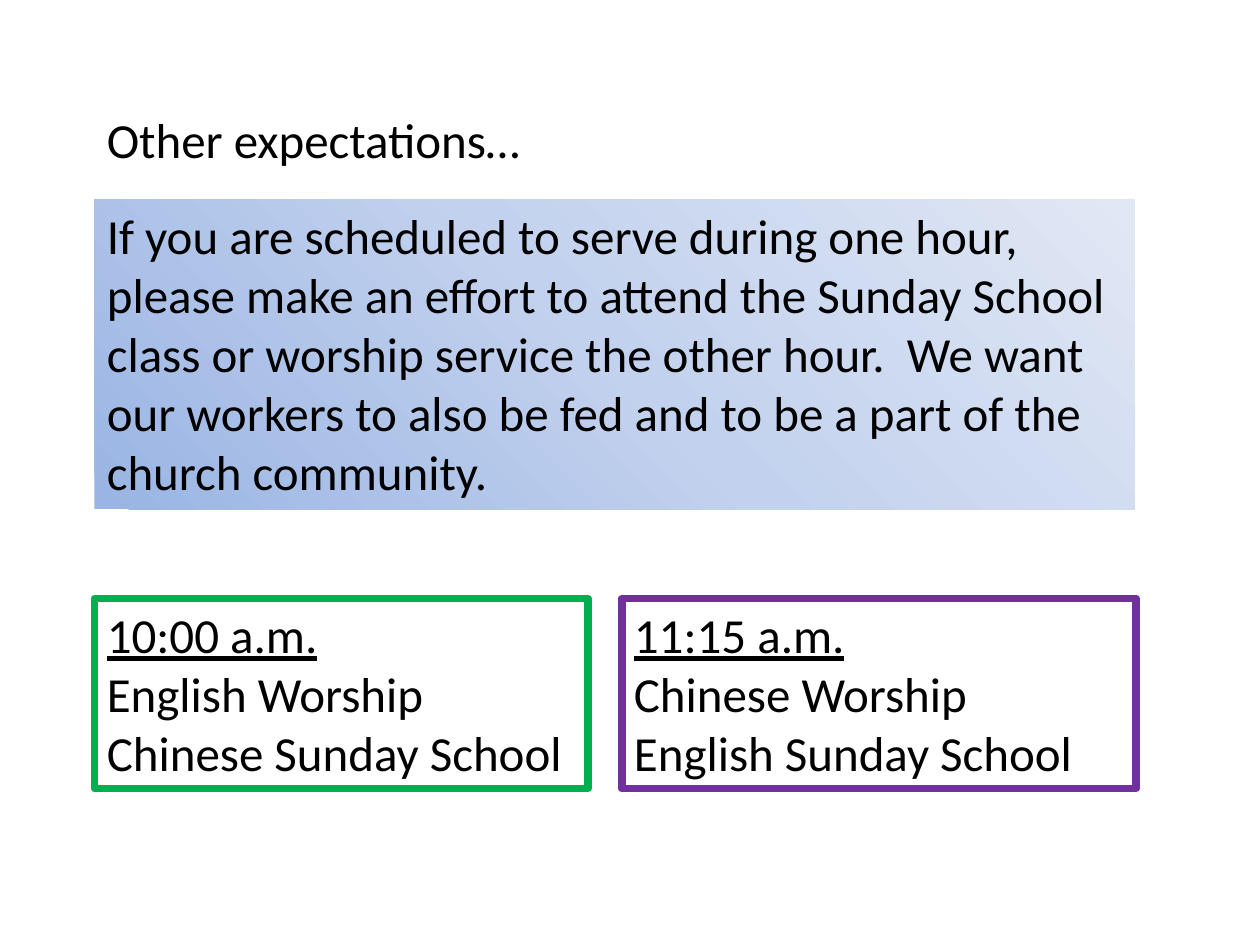
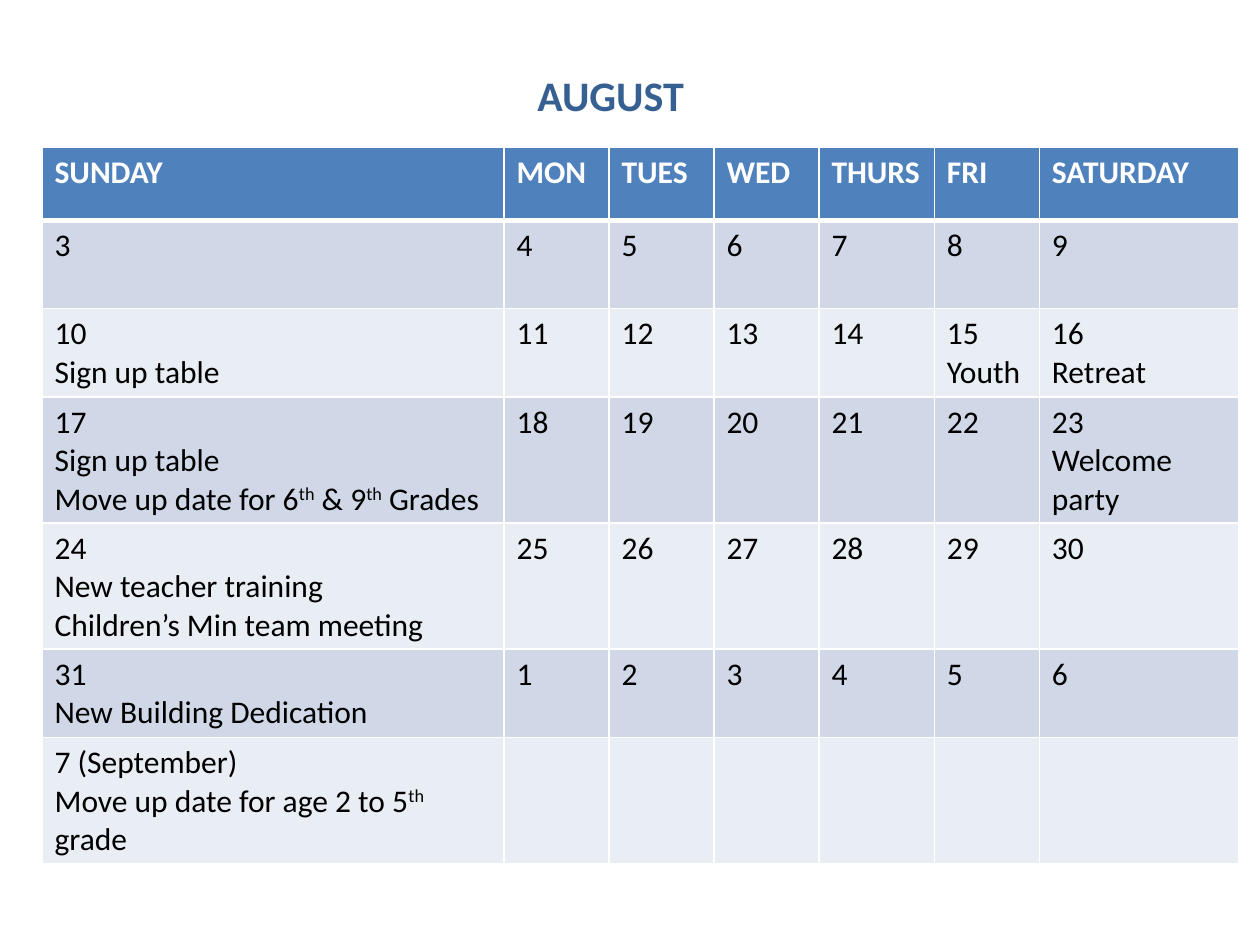
import copy
import dataclasses

import lxml.etree
import pptx
import pptx.dml.color
import pptx.enum.shapes
import pptx.enum.text
import pptx.oxml.ns
import pptx.util

COLS, ROWS = 120, 90


@dataclasses.dataclass(frozen=True)
class Theme:
    font: str = "Calibri"
    ink: str = "000000"
    white: str = "FFFFFF"
    title: str = "376092"
    head: str = "4F81BD"
    bands: tuple = ("D0D8E8", "E9EDF4")
    blend: tuple = ("9AB5E4", "C2D1ED", "E1E8F5")
    green: str = "00B050"
    purple: str = "7030A0"
    large: int = 28
    mid: int = 24
    small: int = 18
    frame: float = 4.5
    thin: int = 1
    thick: int = 3


def rgb(code):
    return pptx.dml.color.RGBColor.from_string(code)


def write(frame, lines, size, font, color, bold=False, under=False):
    """Fill a frame, one paragraph a line; text between bars is raised, under marks line one."""
    for row, line in enumerate(lines):
        para = frame.paragraphs[0] if row == 0 else frame.add_paragraph()
        for part, words in enumerate(line.split("|")):
            run = para.add_run()
            run.text = words
            run.font.name = font
            run.font.size = pptx.util.Pt(size)
            run.font.color.rgb = rgb(color)
            run.font.bold = bold
            run.font.underline = under and row == 0
            if part % 2:
                run.font._element.set("baseline", "30000")


def edge(cell, color, widths):
    """Draw cell borders; widths are in points for left, right, top, bottom."""
    props = cell._tc.get_or_add_tcPr()
    for spot, (side, width) in enumerate(zip("LRTB", widths)):
        line = lxml.etree.Element(pptx.oxml.ns.qn(f"a:ln{side}"), w=str(pptx.util.Pt(width)))
        fill = lxml.etree.SubElement(line, pptx.oxml.ns.qn("a:solidFill"))
        lxml.etree.SubElement(fill, pptx.oxml.ns.qn("a:srgbClr"), val=color)
        props.insert(spot, line)


class Deck:
    """Holds the theme and the slide being drawn; places are grid columns and rows."""

    def __init__(self, theme):
        self.theme = theme
        self.show = pptx.Presentation()
        self.show.slide_width = pptx.util.Inches(10)
        self.show.slide_height = pptx.util.Inches(7.5)
        self.slide = None

    def page(self):
        self.slide = self.show.slides.add_slide(self.show.slide_layouts[6])

    def wide(self, cols):
        return round(self.show.slide_width * cols / COLS)

    def high(self, rows):
        return round(self.show.slide_height * rows / ROWS)

    def place(self, left, top, width, height):
        return self.wide(left), self.high(top), self.wide(width), self.high(height)

    def fit(self, shape, lines, **style):
        """Set wrapped text at the top left of a shape that grows with it."""
        frame = shape.text_frame
        frame.word_wrap = True
        frame.auto_size = pptx.enum.text.MSO_AUTO_SIZE.SHAPE_TO_FIT_TEXT
        frame.vertical_anchor = pptx.enum.text.MSO_ANCHOR.TOP
        style = {"size": self.theme.large, "font": self.theme.font,
                 "color": self.theme.ink} | style
        write(frame, lines, **style)
        for para in frame.paragraphs:
            para.alignment = pptx.enum.text.PP_ALIGN.LEFT

    def label(self, box, text, **style):
        self.fit(self.slide.shapes.add_textbox(*self.place(*box)), [text], **style)

    def panel(self, box, lines, blend=None, line=None, **style):
        kind = pptx.enum.shapes.MSO_SHAPE.RECTANGLE
        shape = self.slide.shapes.add_shape(kind, *self.place(*box))
        shape.shadow.inherit = False
        if blend:
            self.shade(shape.fill, blend)
        else:
            shape.fill.background()
        if line:
            shape.line.color.rgb = rgb(line)
            shape.line.width = pptx.util.Pt(self.theme.frame)
        else:
            shape.line.fill.background()
        self.fit(shape, lines, **style)

    def shade(self, fill, blend):
        """Blend evenly spaced colours from bottom left to top right."""
        fill.gradient()
        fill.gradient_angle = 45
        first = fill.gradient_stops[0]._gs
        for _ in blend[2:]:
            first.addnext(copy.deepcopy(first))
        for step, (stop, color) in enumerate(zip(fill.gradient_stops, blend)):
            stop.color.rgb = rgb(color)
            stop.position = step / (len(blend) - 1)

    def table(self, left, top, widths, heights, cells):
        theme = self.theme
        box = self.place(left, top, sum(widths), sum(heights))
        grid = self.slide.shapes.add_table(len(heights), len(widths), *box).table
        for col, width in zip(grid.columns, widths):
            col.width = self.wide(width)
        for row, height in zip(grid.rows, heights):
            row.height = self.high(height)
        for r, line in enumerate(cells):
            head = r == 0
            above = theme.thick if r == 1 else theme.thin
            below = theme.thick if head else theme.thin
            for c, text in enumerate(line):
                cell = grid.cell(r, c)
                cell.fill.solid()
                cell.fill.fore_color.rgb = rgb(theme.head if head else theme.bands[(r - 1) % 2])
                edge(cell, theme.white, (theme.thin, theme.thin, above, below))
                if text:
                    write(cell.text_frame, text.split("\n"), theme.small, theme.font,
                          theme.white if head else theme.ink, bold=head)


def hopes(deck):
    theme = deck.theme
    deck.page()
    deck.label((9, 9.8, 91, 6.8), "Other expectations…")
    deck.panel((9, 19, 99.1, 29.5), [
        "If you are scheduled to serve during one hour, please make an effort to attend "
        "the Sunday School class or worship service the other hour.  We want our workers "
        "to also be fed and to be a part of the church community."], blend=theme.blend)
    hours = (
        (9, 47, theme.green, ["10:00 a.m.", "English Worship", "Chinese Sunday School"]),
        (59.2, 49, theme.purple, ["11:15 a.m.", "Chinese Worship", "English Sunday School"]),
    )
    for left, width, color, lines in hours:
        deck.panel((left, 57, width, 18.1), lines, line=color, under=True)


def month(deck):
    theme = deck.theme
    days = ["SUNDAY", "MON", "TUES", "WED", "THURS", "FRI", "SATURDAY"]
    notes = {
        10: "Sign up table",
        15: "Youth",
        16: "Retreat",
        17: "Sign up table\nMove up date for 6|th| & 9|th| Grades",
        23: "Welcome party",
        24: "New teacher training\nChildren’s Min team meeting",
        31: "New Building Dedication",
    }

    def entry(day):
        date = str(day if day <= 31 else day - 31)
        return f"{date}\n{notes[day]}" if day in notes else date

    weeks = [[entry(day) for day in range(start, start + 7)] for start in range(3, 32, 7)]
    last = ["7 (September)\nMove up date for age 2 to 5|th| grade"] + [""] * 6
    deck.page()
    deck.table(4, 14, (44, 10, 10, 10, 11, 10, 19), [7] + [8.4] * 6, [days, *weeks, last])
    deck.label((50, 6, 18, 6), "AUGUST", size=theme.mid, color=theme.title, bold=True)


def main():
    deck = Deck(Theme())
    hopes(deck)
    month(deck)
    deck.show.save("out.pptx")


if __name__ == "__main__":
    main()
